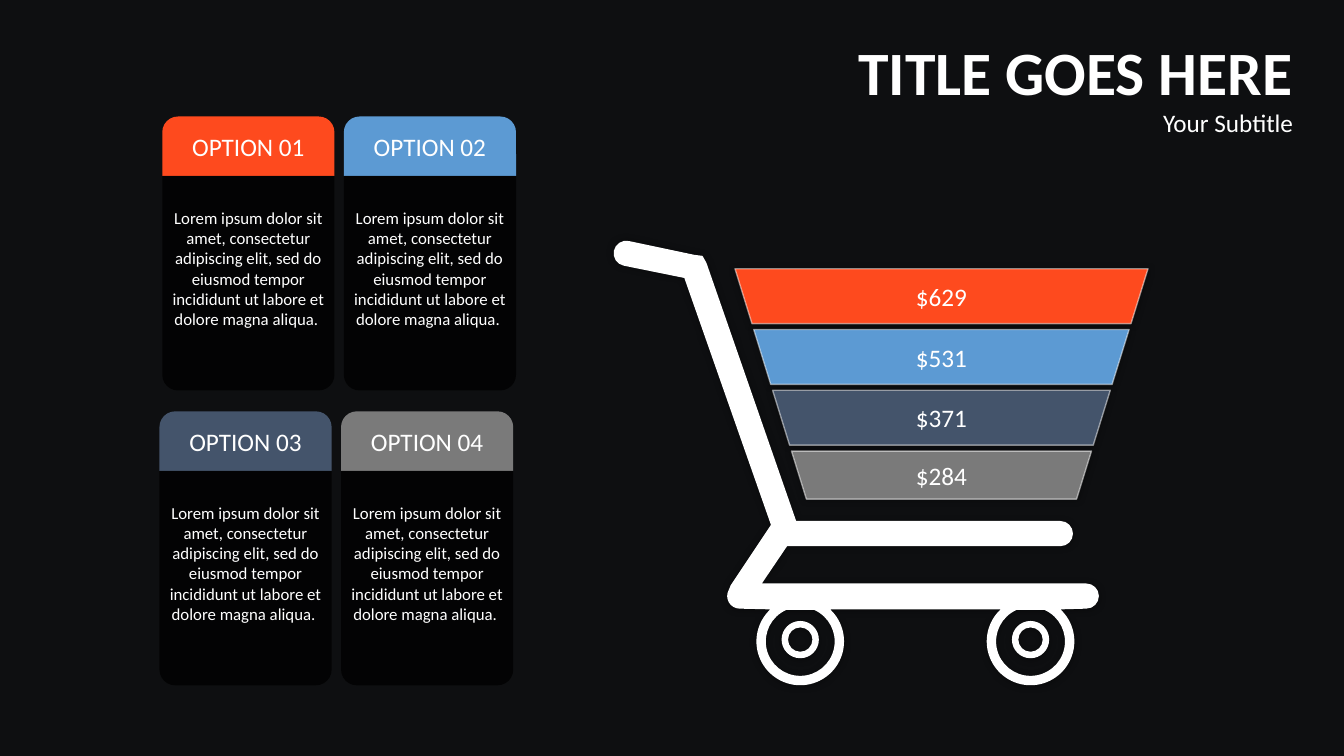
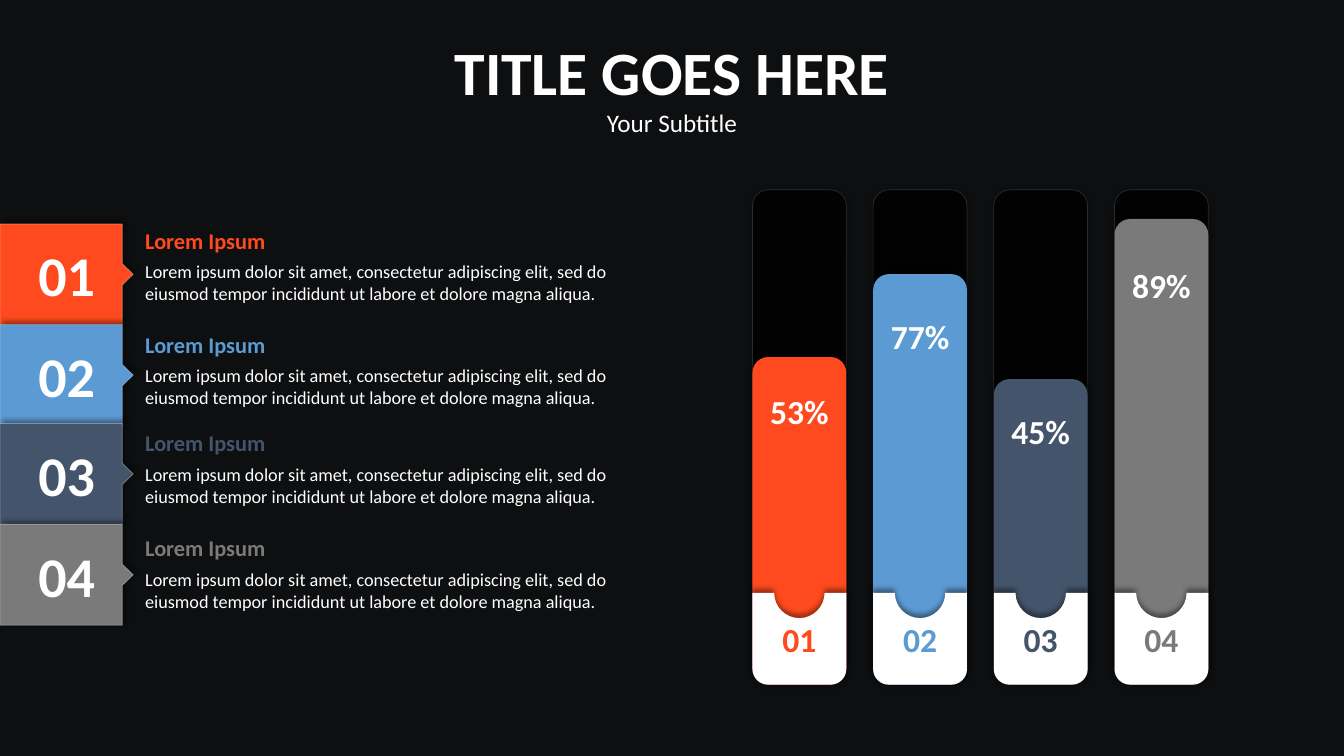
"""Two dark infographic slides: a shopping cart funnel and percentage columns."""
from dataclasses import dataclass
from math import ceil, cos, radians, sin, tan

from lxml.etree import SubElement
from pptx import Presentation
from pptx.dml.color import RGBColor
from pptx.enum.shapes import MSO_SHAPE as Preset
from pptx.enum.text import MSO_ANCHOR as Anchor, PP_ALIGN as Align
from pptx.oxml.ns import qn
from pptx.util import Pt


@dataclass(frozen=True)
class Theme:
    """Colours, font and type sizes in points."""
    back: str = "0E0F11"
    white: str = "FFFFFF"
    black: str = "000000"
    accents: tuple = ("FE4A1E", "5C9AD3", "44546B", "7A7A7A")
    font: str = "Calibri"
    title: int = 44
    number: int = 40
    value: int = 24
    label: int = 18
    heading: int = 16
    detail: int = 13
    small: int = 12
    corner: float = 11.2


@dataclass(frozen=True)
class Box:
    """A rectangle in points."""
    left: float
    top: float
    width: float
    height: float

    def lengths(self):
        """Return the four lengths for python-pptx."""
        return Pt(self.left), Pt(self.top), Pt(self.width), Pt(self.height)


THEME = Theme()
GLOW = (5, 0, 0)
LIFT = (4, 3, 270)
LIFT_RIGHT = (4, 3, 315)
INSETS = (7.2, 3.6, 7.2, 3.6)
LOREM = ("Lorem ipsum dolor sit amet, consectetur adipiscing elit, "
         "sed do eiusmod tempor incididunt ut labore et dolore magna aliqua.")


def set_alpha(parent, percent):
    """Make the first colour below an element partly transparent."""
    colour = next(parent.iter(qn("a:srgbClr")))
    SubElement(colour, qn("a:alpha"), val=str(percent * 1000))


def style(shape, colour, alpha=100, outline=None, shadow=None):
    """Give a shape its fill, outline (width, alpha) and shadow (blur, distance, angle)."""
    properties = shape.fill._xPr
    shape.fill.solid()
    shape.fill.fore_color.rgb = RGBColor.from_string(colour)
    if alpha < 100:
        set_alpha(properties, alpha)
    if outline:
        width, line_alpha = outline
        shape.line.width = Pt(width)
        shape.line.color.rgb = RGBColor.from_string(THEME.white)
        set_alpha(properties.find(qn("a:ln")), line_alpha)
    else:
        shape.line.fill.background()
    shape.shadow.inherit = False
    if shadow:
        blur, distance, angle = shadow
        effects = properties.find(qn("a:effectLst"))
        outer = SubElement(effects, qn("a:outerShdw"), blurRad=str(Pt(blur)),
                           dist=str(Pt(distance)), dir=str(angle * 60000),
                           rotWithShape="0")
        SubElement(outer, qn("a:srgbClr"), val=THEME.black)
        set_alpha(outer, 40)
    return shape


def write(shape, lines, align=Align.CENTER, anchor=Anchor.MIDDLE, insets=INSETS, gap=0):
    """Fill a shape with lines of (text, size, colour, bold)."""
    frame = shape.text_frame
    frame.word_wrap = True
    frame.vertical_anchor = anchor
    (frame.margin_left, frame.margin_top,
     frame.margin_right, frame.margin_bottom) = map(Pt, insets)
    for index, (text, size, colour, bold) in enumerate(lines):
        para = frame.add_paragraph() if index else frame.paragraphs[0]
        para.alignment = align
        if index and gap:
            para.space_before = Pt(gap)
        span = para.add_run()
        span.text = text
        span.font.name = THEME.font
        span.font.size = Pt(size)
        span.font.bold = bold
        span.font.color.rgb = RGBColor.from_string(colour)


def add_text(page, box, lines, align=Align.CENTER, **options):
    """Add a text box whose text starts at the top."""
    write(page.shapes.add_textbox(*box.lengths()), lines, align, Anchor.TOP, **options)


def add_preset(page, preset, box, corners=()):
    """Add a preset shape with corner radii in points."""
    shape = page.shapes.add_shape(preset, *box.lengths())
    for index, radius in enumerate(corners):
        shape.adjustments[index] = radius / min(box.width, box.height)
    return shape


def add_outline(page, box, *contours):
    """Add a freeform from closed contours of corners (x, y) and three-point curves."""
    builder, segments = None, []
    for contour in contours:
        steps = [step if len(step) == 3 else (step,) for step in contour]
        points = [(Pt(box.left + x), Pt(box.top + y)) for step in steps for x, y in step]
        if builder is None:
            builder = page.shapes.build_freeform(*points[0])
        else:
            builder.move_to(*points[0])
        builder.add_line_segments(points[1:], close=True)
        segments += steps[1:]
    shape = builder.convert_to_shape()
    lines = iter(list(shape.fill._xPr.iter(qn("a:lnTo"))))
    for segment in segments:
        first = next(lines)
        if len(segment) == 3:
            first.tag = qn("a:cubicBezTo")
            for extra in (next(lines), next(lines)):
                first.append(extra[0])
                extra.getparent().remove(extra)
    return shape


def arc(x, y, radius, start, end):
    """Return the first point and the curves of an arc, clockwise from the right."""
    count = ceil(abs(end - start) / 90)
    turn = radians(end - start) / count
    pull = 4 / 3 * tan(turn / 4)

    def spot(angle, along=0):
        """Return a point at an angle, moved along its tangent."""
        return (x + radius * (cos(angle) - along * sin(angle)),
                y + radius * (sin(angle) + along * cos(angle)))

    angles = [radians(start) + turn * step for step in range(count)]
    return [spot(angles[0])] + [
        (spot(angle, pull), spot(angle + turn, -pull), spot(angle + turn))
        for angle in angles]


def add_heading(page, box, align):
    """Add the title with its subtitle."""
    add_text(page, box, [("TITLE GOES HERE", THEME.title, THEME.white, True),
                         ("Your Subtitle", THEME.label, THEME.white, False)], align)


def add_basket(page, box, amounts):
    """Stack tapering slabs, one for each amount."""
    pitch, slope = 43.4, 0.31
    for index, (amount, colour) in enumerate(zip(amounts, THEME.accents)):
        top = index * pitch
        bottom = min(top + 39.2, box.height)
        slab = add_outline(page, box, [
            (slope * top, top), (box.width - slope * top, top),
            (box.width - slope * bottom, bottom), (slope * bottom, bottom)])
        style(slab, colour, outline=(1, 50), shadow=GLOW)
        write(slab, [(amount, THEME.label, THEME.white, False)])


def add_cart(page, box):
    """Draw the cart frame with its two wheels as one outline."""
    wheels, axle, bar = (133.2, 297.7), 286.2, 9
    tyres = [step for x in reversed(wheels) for step in arc(x, axle, 31.3, -47, 227)]
    frame = [
        *arc(8.9, 9, bar, 102, 282),
        (57.6, 10.1), (63.4, 10.8), (66.2, 15.8), (130.3, 200.2),
        *arc(319, 209.2, bar, -90, 90),
        (123.8, 218.2), (105.8, 244.8),
        *arc(337.5, 253.8, bar, -90, 90),
        *tyres,
        *arc(90, 253.8, bar, 90, 210),
        (83.5, 246.2), (112.3, 203), (50.4, 26.6)]
    rings = []
    for x in wheels:
        rings += [arc(x, axle, 24.6, -66, 246),
                  arc(x, axle - 1.3, 13.3, 0, 360),
                  arc(x, axle - 1.3, 8.7, 0, 360)]
    style(add_outline(page, box, frame, *rings), THEME.white, shadow=GLOW)


def add_card(page, box, label, colour):
    """Add an option card with a coloured head and a dark body."""
    head_height, corner = 42.5, THEME.corner
    head = add_preset(page, Preset.ROUND_2_SAME_RECTANGLE,
                      Box(box.left, box.top, box.width, head_height), (corner, 0))
    write(style(head, colour), [(label, THEME.label, THEME.white, False)],
          insets=(0, 0, 0, 3.3))
    body = Box(box.left, box.top + head_height, box.width, box.height - head_height)
    style(add_preset(page, Preset.ROUND_2_SAME_RECTANGLE, body, (0, corner)),
          THEME.black, alpha=75)
    add_text(page, Box(box.left, body.top + 19.2, box.width, 131),
             [(LOREM + " ", THEME.small, THEME.white, False)])


def add_tag(page, box, number, colour):
    """Add a numbered tag pointing to the right."""
    edge, middle, tip = box.width - 7.8, box.height / 2, 7.6
    tag = add_outline(page, box, [
        (0, 0), (edge, 0), (edge, middle - tip), (box.width, middle),
        (edge, middle + tip), (edge, box.height), (0, box.height)])
    style(tag, colour, outline=(0.5, 35), shadow=LIFT_RIGHT)
    write(tag, [(number, THEME.number, THEME.white, True)])


def add_column(page, box, number, percent, level, colour):
    """Add a track, its filled level and a notched foot."""
    corner, foot_height, notch = THEME.corner, 65.5, 18
    bottom = box.top + box.height
    track = add_preset(page, Preset.ROUNDED_RECTANGLE, box, (corner,))
    style(track, THEME.black, alpha=75, outline=(0.5, 15), shadow=GLOW)
    filled = Box(box.left, bottom - level, box.width, level)
    style(add_preset(page, Preset.ROUNDED_RECTANGLE, filled, (corner,)),
          colour, shadow=LIFT)
    add_text(page, Box(box.left, filled.top + 0.09 * level - 0.4, box.width, 33),
             [(percent, THEME.value, THEME.white, True)])
    foot = add_outline(
        page, Box(box.left, bottom - foot_height, box.width, foot_height),
        [(0, 0), *arc(box.width / 2, 0, notch, 180, 0), (box.width, 0),
         *arc(box.width - corner, foot_height - corner, corner, 0, 90),
         *arc(corner, foot_height - corner, corner, 90, 180)])
    style(foot, THEME.white, shadow=LIFT)
    write(foot, [(number, THEME.value, colour, True)])


def build_cart_slide(page):
    """Build the slide with the cart and four option cards."""
    add_basket(page, Box(525, 192, 295, 164.5), ("$629", "$531", "$371", "$284"))
    add_cart(page, Box(438.4, 172, 347, 317.5))
    for index, colour in enumerate(THEME.accents):
        row, column = divmod(index, 2)
        add_card(page, Box(115.9 - 2 * row + 129.7 * column, 83.2 + 210.6 * row, 123, 195.7),
                 f"OPTION {index + 1:02}", colour)
    add_heading(page, Box(497.4, 20.5, 433.4, 82), Align.RIGHT)


def build_column_slide(page):
    """Build the slide with numbered notes and four columns."""
    add_heading(page, Box(263.3, 20.5, 433.4, 82), Align.CENTER)
    columns = (("53%", 234), ("77%", 293.2), ("45%", 218.2), ("89%", 332.6))
    tops = ((160, 162), (232, 236.3), (302.5, 306.6), (374.6, 381.5))
    for index, (colour, (percent, level), (tag_top, note_top)) in enumerate(
            zip(THEME.accents, columns, tops)):
        number = f"{index + 1:02}"
        add_column(page, Box(537.5 + 86.2 * index, 135.6, 67, 353.4),
                   number, percent, level, colour)
        add_tag(page, Box(0, tag_top, 95.2, 72), number, colour)
        add_text(page, Box(103.7, note_top, 361, 55.4),
                 [("Lorem Ipsum", THEME.heading, colour, True),
                  (LOREM, THEME.detail, THEME.white, False)],
                 Align.LEFT, insets=(0, 0, 0, 0), gap=5)


def set_backdrop(deck, page):
    """Colour the master and lay one translucent panel on it for every slide."""
    colour = deck.slide_master.background.fill
    colour.solid()
    colour.fore_color.rgb = RGBColor.from_string(THEME.back)
    panel = add_preset(page, Preset.RECTANGLE, Box(0, 0, 960, 540))
    style(panel, THEME.back, alpha=80)
    deck.slide_master.shapes._spTree.insert(2, panel._element)


def main():
    """Build and save the deck."""
    deck = Presentation()
    deck.slide_width, deck.slide_height = Pt(960), Pt(540)
    pages = [deck.slides.add_slide(deck.slide_layouts[6]) for _ in range(2)]
    set_backdrop(deck, pages[0])
    build_cart_slide(pages[0])
    build_column_slide(pages[1])
    deck.save("out.pptx")


if __name__ == "__main__":
    main()
